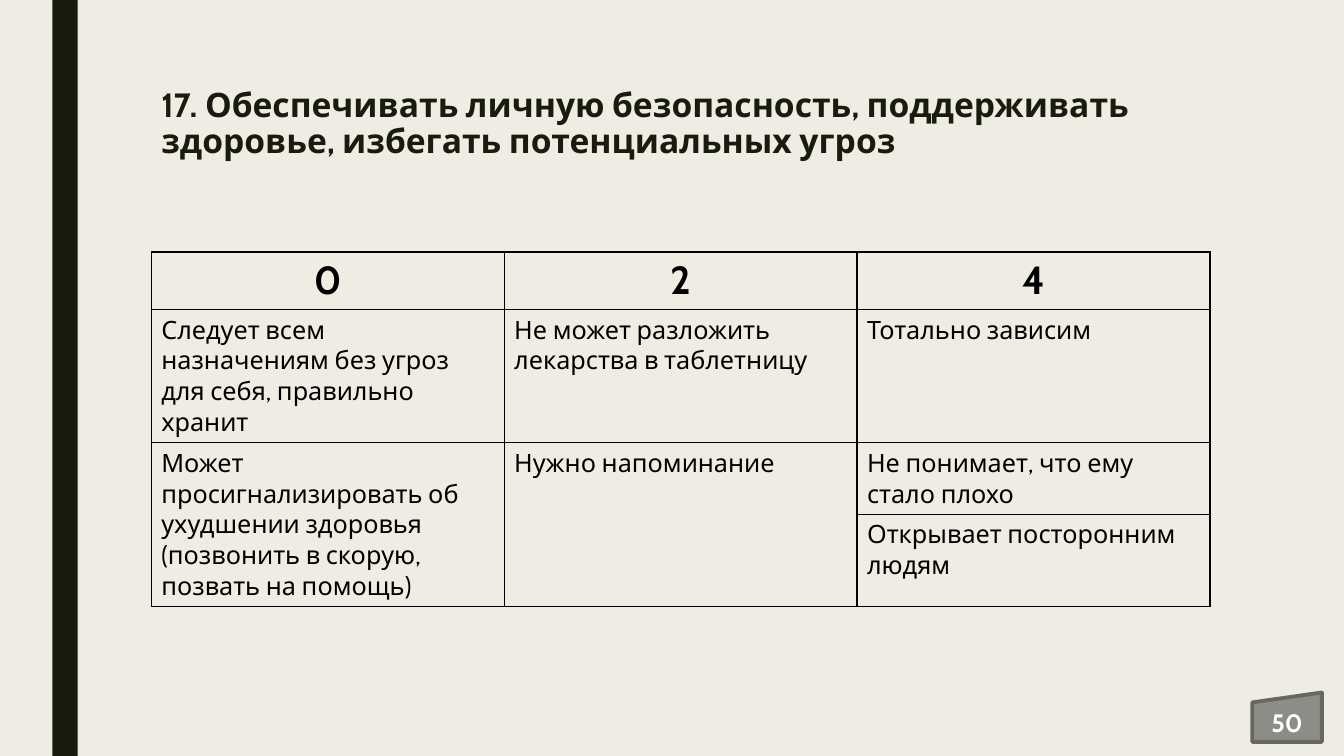
import pptx
import pptx.dml.color
import pptx.enum.shapes
import pptx.enum.text
import pptx.oxml
import pptx.oxml.ns
import pptx.util

WIDTH, HEIGHT = 13.33, 7.5
FONT = "Cabin"
DARK, PAPER, BLACK, WHITE = "191B0E", "EFEDE3", "000000", "FFFFFF"
BADGE_FILL, BADGE_LINE = "8C8D86", "686863"

# Content frame shared by the title and the table
LEFT, CONTENT_WIDTH = 1.5, 10.5
ROW_HEIGHTS = [0.57, 1.32, 0.71, 0.91]

TITLE = ("17. Обеспечивать личную безопасность, поддерживать здоровье, "
         "избегать потенциальных угроз")
SCORES = [
    ["0", "2", "4"],
    ["Следует всем назначениям без угроз для себя, правильно хранит",
     "Не может разложить лекарства в таблетницу",
     "Тотально зависим"],
    ["Может просигнализировать об ухудшении здоровья "
     "(позвонить в скорую, позвать на помощь)",
     "Нужно напоминание",
     "Не понимает, что ему стало плохо"],
    [None, None, "Открывает посторонним людям"],
]


def color(hex_text):
    return pptx.dml.color.RGBColor.from_string(hex_text)


def box(left, top, width, height):
    return [pptx.util.Inches(value) for value in (left, top, width, height)]


def write(text_frame, text, size, hex_text, bold=False, centered=False):
    """Fill a text frame with one formatted paragraph."""
    text_frame.text = text
    text_frame.word_wrap = True
    paragraph = text_frame.paragraphs[0]
    align = pptx.enum.text.PP_ALIGN
    paragraph.alignment = align.CENTER if centered else align.LEFT
    paragraph.font.name = FONT
    paragraph.font.size = pptx.util.Pt(size)
    paragraph.font.bold = bold
    paragraph.font.color.rgb = color(hex_text)
    return paragraph


def add_block(slide, kind, place, fill, line=None, line_width=0):
    shape = slide.shapes.add_shape(kind, *box(*place))
    shape.shadow.inherit = False
    shape.fill.solid()
    shape.fill.fore_color.rgb = color(fill)
    if line:
        shape.line.color.rgb = color(line)
        shape.line.width = pptx.util.Pt(line_width)
    else:
        shape.line.fill.background()
    return shape


def set_title(slide, text):
    title = slide.shapes.title
    title.left, title.top, title.width, title.height = box(
        LEFT, HEIGHT * 0.1, CONTENT_WIDTH, HEIGHT * 0.13)
    paragraph = write(title.text_frame, text, 24, DARK, bold=True)
    paragraph.line_spacing = 0.89
    title.text_frame.vertical_anchor = pptx.enum.text.MSO_ANCHOR.MIDDLE


def set_borders(cell, hex_text, width):
    properties = cell._tc.get_or_add_tcPr()
    for side in ("lnL", "lnR", "lnT", "lnB"):
        properties.append(pptx.oxml.parse_xml(
            f'<a:{side} {pptx.oxml.ns.nsdecls("a")} w="{pptx.util.Pt(width)}">'
            f'<a:solidFill><a:srgbClr val="{hex_text}"/></a:solidFill>'
            f'</a:{side}>'))


def add_score_table(slide, rows):
    column_count = len(rows[0])
    table = slide.shapes.add_table(
        len(rows), column_count,
        *box(LEFT, HEIGHT / 3, CONTENT_WIDTH, sum(ROW_HEIGHTS))).table
    table.first_row = False
    table.horz_banding = False
    for column in table.columns:
        column.width = pptx.util.Inches(CONTENT_WIDTH / column_count)
    for row, height in zip(table.rows, ROW_HEIGHTS):
        row.height = pptx.util.Inches(height)

    for row_index, texts in enumerate(rows):
        header = row_index == 0
        for column_index, text in enumerate(texts):
            cell = table.cell(row_index, column_index)
            set_borders(cell, BLACK, 1)
            cell.fill.background()
            if text is None:
                # A gap continues the cell above
                table.cell(row_index - 1, column_index).merge(cell)
            else:
                write(cell.text_frame, text, 28 if header else 18, BLACK,
                      bold=header, centered=header)


def add_page_number(slide, number):
    badge = add_block(
        slide, pptx.enum.shapes.MSO_SHAPE.FLOWCHART_MANUAL_INPUT,
        (12.42, 6.87, 0.69, 0.49), BADGE_FILL, BADGE_LINE, 2.75)
    write(badge.text_frame, number, 18, WHITE, bold=True, centered=True)
    badge.text_frame.vertical_anchor = pptx.enum.text.MSO_ANCHOR.MIDDLE


def main():
    presentation = pptx.Presentation()
    presentation.slide_width = pptx.util.Inches(WIDTH)
    presentation.slide_height = pptx.util.Inches(HEIGHT)
    slide = presentation.slides.add_slide(presentation.slide_layouts[5])

    # Background and side bar
    slide.background.fill.solid()
    slide.background.fill.fore_color.rgb = color(PAPER)
    add_block(slide, pptx.enum.shapes.MSO_SHAPE.RECTANGLE,
              (0.52, 0, 0.25, HEIGHT), DARK)

    # Content
    set_title(slide, TITLE)
    add_page_number(slide, "50")
    add_score_table(slide, SCORES)

    presentation.save("out.pptx")


if __name__ == "__main__":
    main()
